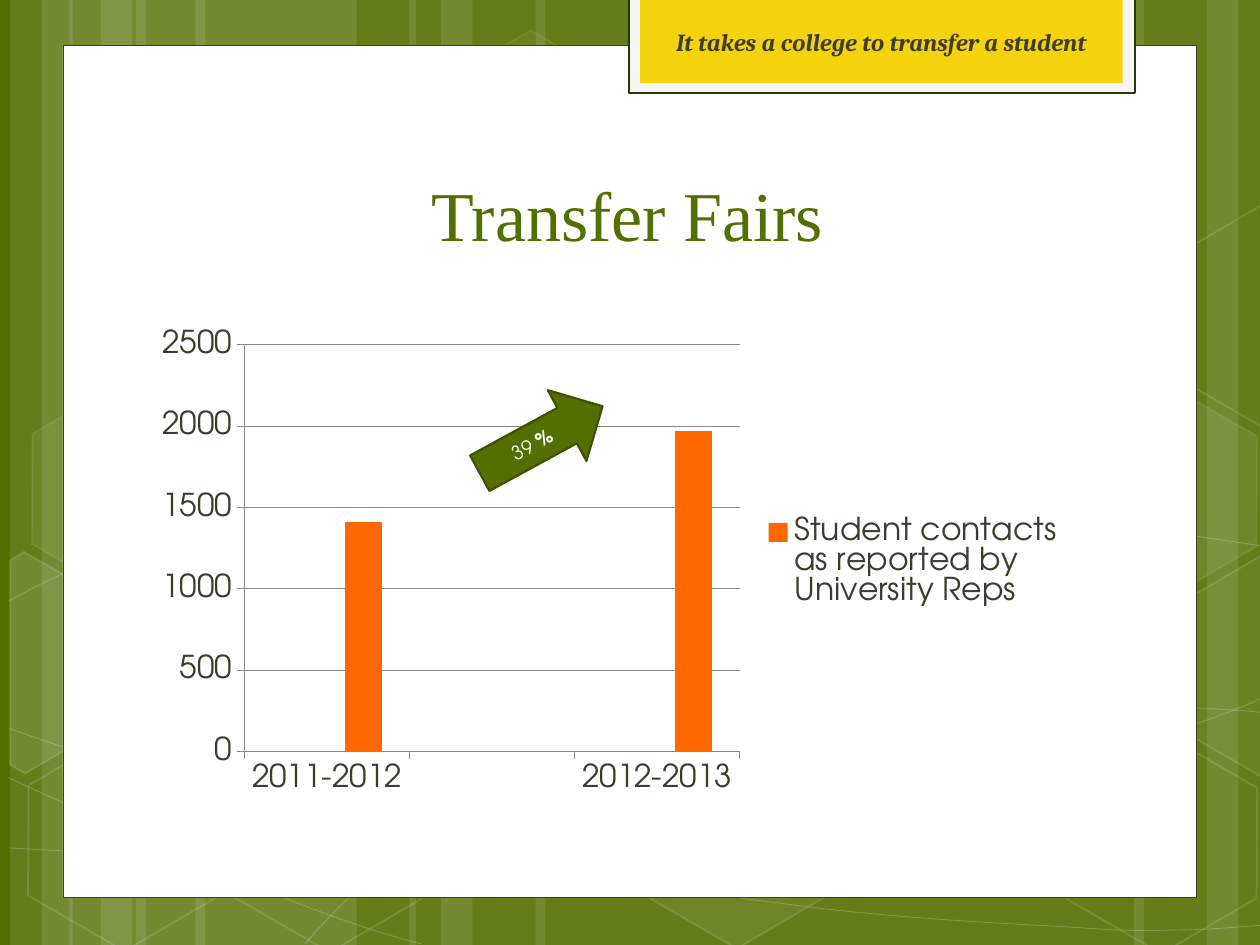
from dataclasses import dataclass

from lxml import etree
from pptx import Presentation
from pptx.chart.data import CategoryChartData
from pptx.dml.color import RGBColor
from pptx.enum.chart import XL_CHART_TYPE, XL_LEGEND_POSITION, XL_TICK_MARK
from pptx.enum.shapes import MSO_SHAPE
from pptx.enum.text import MSO_ANCHOR, PP_ALIGN
from pptx.oxml.ns import qn
from pptx.util import Cm, Pt

RECT, HEX, ARROW = MSO_SHAPE.RECTANGLE, MSO_SHAPE.HEXAGON, MSO_SHAPE.RIGHT_ARROW
LEFT, CENTER = PP_ALIGN.LEFT, PP_ALIGN.CENTER
MIDDLE, BOTTOM = MSO_ANCHOR.MIDDLE, MSO_ANCHOR.BOTTOM
COLUMN, RIGHT = XL_CHART_TYPE.COLUMN_CLUSTERED, XL_LEGEND_POSITION.RIGHT
OUT, NONE = XL_TICK_MARK.OUTSIDE, XL_TICK_MARK.NONE
INCH = 2.54
SANS = "TeX Gyre Adventor"
HUES = {"green": "536F00", "white": "FFFFFF", "ink": "3E3D2D", "pale": "F5F5F5",
        "dark": "2A3800", "gold": "F4D30C", "orange": "FF6700", "moss": "3D5200",
        "gray": "878787"}


@dataclass
class Box:
    x: float
    y: float
    w: float
    h: float

    def cms(self) -> list:
        return [Cm(v * INCH) for v in (self.x, self.y, self.w, self.h)]


@dataclass
class Paint:
    fill: str = ""
    line: str = ""
    width: float = 1
    fade: int = 100
    glow: int = 100


@dataclass
class Run:
    text: str
    font: str
    size: float
    hue: str
    bold: bool = False
    slant: bool = False


STRIPES = [(1.08, 1.75), (0.08, 0.5), (0.33, 0.83), (1.55, 1.75), (0.55, 0.5), (0.8, 0.83),
           (7.33, 1.75), (9.58, 0.5), (9, 0.83), (4.25, 3.08), (3.25, 0.5), (3.5, 0.83)]
WAVES = [
    [(0.07, 6.73), (0.61, 6.76), (1.15, 6.79), (1.9, 6.78), (2.65, 6.77), (3.58, 6.75),
     (4.58, 6.65), (5.58, 6.55), (7, 6.36), (7.92, 6.17), (8.83, 5.98), (9.77, 5.68),
     (10.07, 5.51)],
    [(0.07, 4.77), (0.36, 4.61), (0.65, 4.46), (1.21, 4.31), (1.78, 4.16), (2.59, 3.94),
     (3.47, 3.87), (4.36, 3.8), (5.44, 3.79), (6.54, 3.87), (7.64, 3.95), (9.47, 4.26),
     (10.07, 4.34)],
    [(0.06, 6.17), (1.27, 6.72), (2.47, 7.27), (3.34, 7.49)],
    [(0.07, 5.78), (0.38, 5.89), (0.7, 6), (1.28, 6.16), (1.86, 6.31), (2.73, 6.56),
     (3.57, 6.73), (4.4, 6.9), (5.45, 7.08), (6.28, 7.18), (7.11, 7.29), (8, 7.33),
     (8.53, 7.36), (9.05, 7.4), (9.19, 7.38), (9.45, 7.38), (9.71, 7.37), (9.89, 7.35),
     (10.07, 7.34)],
    [(2.42, 7.49), (2.6, 7.29), (2.78, 7.09), (3.02, 6.91), (3.26, 6.73), (3.6, 6.53),
     (3.88, 6.39), (4.16, 6.25), (4.33, 6.19), (4.7, 6.09), (5.06, 5.99), (5.73, 5.85),
     (6.08, 5.78), (6.44, 5.71), (6.49, 5.71), (6.8, 5.69), (7.11, 5.66), (7.6, 5.63),
     (7.94, 5.62), (8.29, 5.61), (8.86, 5.62), (8.86, 5.62), (8.86, 5.62), (9.53, 5.62),
     (9.53, 5.62), (9.71, 5.63), (9.88, 5.64), (9.97, 5.65), (10.06, 5.66), (10.03, 5.65),
     (10.06, 5.66)],
]
CELLS = [(3.34, 0.36, 4, 8), (4.97, 5.89, 6, 12), (0.11, 5.91, 0, 12), (0.14, 3.12, 7, 8),
         (1.74, 5.92, 0, 12), (7.53, 4.53, 10, 12), (8.34, 5.93, 0, 12), (8.34, 3.14, 7, 8)]
CHIPS = [
    ([(0.08, 4.45), (0.19, 4.38), (0.96, 4.82), (0.95, 5.7), (0.2, 6.14), (0.08, 6.07)], 10),
    ([(9.26, 4.85), (10.01, 4.41), (10.09, 4.46), (10.09, 6.13), (10.02, 6.17), (9.26, 5.73)], 4),
    ([(9.26, 2.07), (10.01, 1.63), (10.1, 1.68), (10.09, 3.35), (10.02, 3.39), (9.26, 2.95)], 0),
]


def rgb(hue: str) -> RGBColor:
    return RGBColor.from_string(HUES[hue])


def dim(node, part: int) -> None:
    if part < 100:
        tone = next(node.iter(qn("a:srgbClr")))
        etree.SubElement(tone, qn("a:alpha"), val=str(part * 1000))


def coat(shape, paint: Paint) -> None:
    shape.shadow.inherit = False
    props = shape._element.spPr
    if paint.fill and paint.fade:
        shape.fill.solid()
        shape.fill.fore_color.rgb = rgb(paint.fill)
        dim(props.find(qn("a:solidFill")), paint.fade)
    else:
        shape.fill.background()
    if paint.line:
        shape.line.color.rgb = rgb(paint.line)
        shape.line.width = Pt(paint.width)
        dim(props.find(qn("a:ln")), paint.glow)
    else:
        shape.line.fill.background()


def block(slide, kind, box: Box, paint: Paint, turn: float = 0):
    shape = slide.shapes.add_shape(kind, *box.cms())
    shape.rotation = turn
    coat(shape, paint)
    return shape


def trace(slide, points: list, paint: Paint, close: bool):
    spots = [(Cm(x * INCH), Cm(y * INCH)) for x, y in points]
    pen = slide.shapes.build_freeform(*spots[0])
    pen.add_line_segments(spots[1:], close=close)
    shape = pen.convert_to_shape()
    coat(shape, paint)
    return shape


def bend(shape, knots: list) -> None:
    steps = list(shape._element.iter(qn("a:lnTo")))
    for i in range(0, len(steps), 3):
        trio = steps[i:i + 3]
        if knots[i] == knots[i + 1] and knots[i + 2] == knots[i + 3]:
            for step in trio[:2]:
                step.getparent().remove(step)
            continue
        curve = etree.Element(qn("a:cubicBezTo"))
        trio[0].addprevious(curve)
        for step in trio:
            curve.append(step[0])
            step.getparent().remove(step)


def style(font, run: Run) -> None:
    font.name, font.size = run.font, Pt(run.size)
    font.bold, font.italic = run.bold, run.slant
    font.color.rgb = rgb(run.hue)


def write(shape, runs: list, align, anchor) -> None:
    frame = shape.text_frame
    frame.word_wrap = True
    frame.vertical_anchor = anchor
    line = frame.paragraphs[0]
    line.alignment = align
    for run in runs:
        item = line.add_run()
        item.text = run.text
        style(item.font, run)


def graph(slide, box: Box) -> None:
    data = CategoryChartData()
    data.categories = ["2011-2012", "", "2012-2013"]
    data.add_series("Series 1", [None] * 3)
    data.add_series("Series 2", [None] * 3)
    data.add_series("Student contacts as reported by University Reps", [1410, None, 1970])
    chart = slide.shapes.add_chart(COLUMN, *box.cms(), data).chart
    chart.has_title = False
    style(chart.font, Run("", SANS, 18, "ink"))
    plot = chart.plots[0]
    plot.gap_width, plot.overlap, plot.vary_by_categories = 150, 0, False
    for row, hue in zip(plot.series, ("green", "gold", "orange")):
        row.format.fill.solid()
        row.format.fill.fore_color.rgb = rgb(hue)
    scale = chart.value_axis
    scale.has_major_gridlines = True
    for axis in (scale, chart.category_axis):
        axis.major_tick_mark, axis.minor_tick_mark = OUT, NONE
    for part in (scale, chart.category_axis, scale.major_gridlines):
        part.format.line.color.rgb = rgb("gray")
        part.format.line.width = Pt(0.75)
    chart.has_legend = True
    key = chart.legend
    key.position, key.include_in_layout = RIGHT, False
    for n in (1, 0):
        entry = etree.Element(qn("c:legendEntry"))
        etree.SubElement(entry, qn("c:idx"), val=str(n))
        etree.SubElement(entry, qn("c:delete"), val="1")
        key._element.find(qn("c:legendPos")).addnext(entry)


def main() -> None:
    deck = Presentation()
    deck.slide_width, deck.slide_height = Cm(25.4), Cm(19.05)
    slide = deck.slides.add_slide(deck.slide_layouts[6])
    back = slide.background.fill
    back.solid()
    back.fore_color.rgb = rgb("green")
    for x, w in STRIPES:
        block(slide, RECT, Box(x, 0, w, 7.5), Paint("white", fade=10))
    for knots in WAVES:
        bend(trace(slide, knots, Paint(line="white", width=0.5, glow=20), False), knots)
    for x, y, fade, glow in CELLS:
        cell = block(slide, HEX, Box(x, y, 1.75, 1.52), Paint("white", "white", 1, fade, glow), 30)
        cell.adjustments[0] = 0.285
    for points, fade in CHIPS:
        trace(slide, points, Paint("white", "white", 1, fade, 12), True)
    block(slide, RECT, Box(0.5, 0.36, 9, 6.76), Paint("white", "ink", 0.5))
    block(slide, RECT, Box(4.99, -0.02, 4.02, 0.76), Paint("pale", "dark", 1.25))
    block(slide, RECT, Box(5.08, -0.02, 3.83, 0.68), Paint("gold"))
    title = slide.shapes.add_textbox(*Box(1.14, 1.12, 7.68, 0.96).cms())
    write(title, [Run("Transfer Fairs", "Times New Roman", 40, "green")], CENTER, BOTTOM)
    graph(slide, Box(1.14, 2.54, 7.41, 3.84))
    arrow = block(slide, ARROW, Box(3.74, 3.17, 1.11, 0.64), Paint("green", "moss", 1.25), 331.4)
    arrow.text_frame.margin_left = Cm(0.77)
    arrow.text_frame.margin_right = Cm(0)
    write(arrow, [Run("39 ", SANS, 11, "white"), Run("%", SANS, 11, "white", True)], LEFT, MIDDLE)
    motto = slide.shapes.add_textbox(*Box(5.08, 0.16, 3.83, 0.34).cms())
    write(motto, [Run("It takes a college to transfer a student", "Cambria", 14, "ink", True, True)],
          CENTER, MIDDLE)
    deck.save("out.pptx")


if __name__ == "__main__":
    main()
